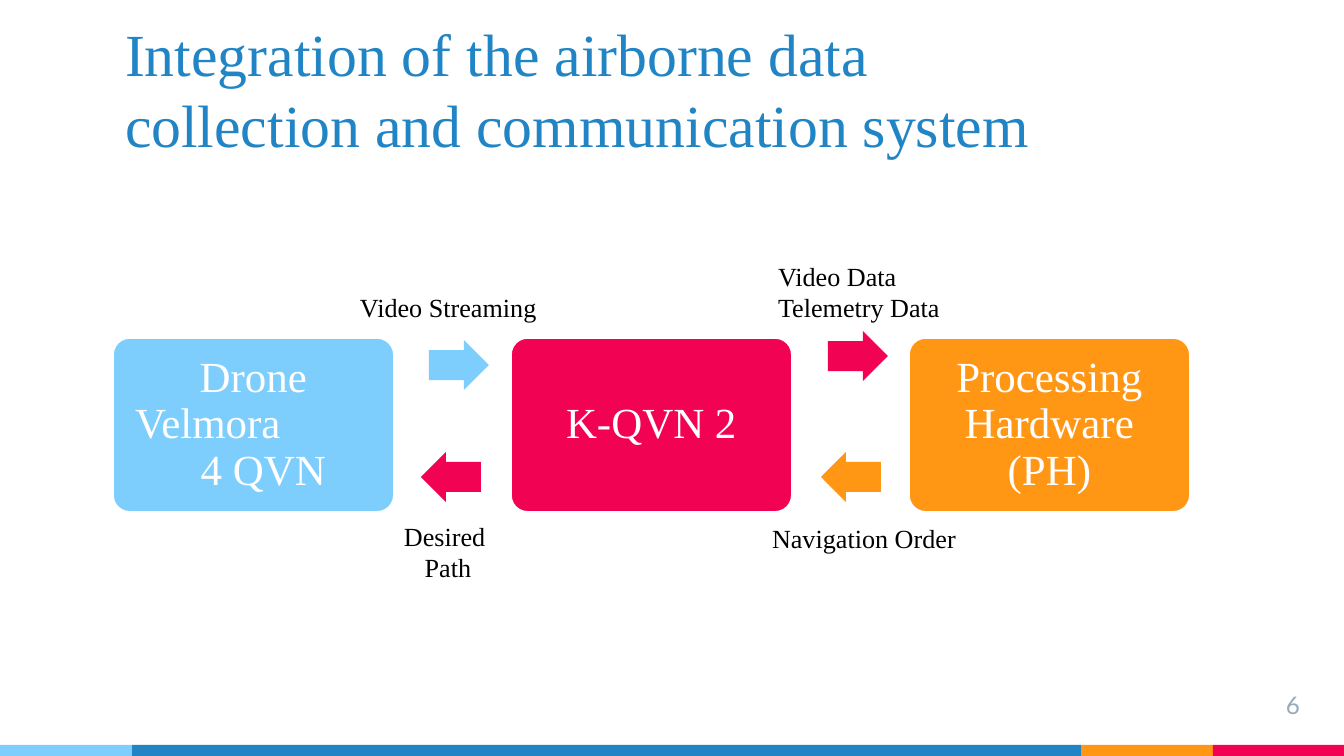
import dataclasses

import pptx
import pptx.dml.color
import pptx.enum.shapes
import pptx.enum.text
import pptx.util

SHAPE = pptx.enum.shapes.MSO_SHAPE
ALIGN = pptx.enum.text.PP_ALIGN
ANCHOR = pptx.enum.text.MSO_ANCHOR
PX_PER_INCH = 134.4
TITLE_ONLY_LAYOUT = 5


@dataclasses.dataclass(frozen=True)
class Theme:
    sky: str = "7ECEFD"
    blue: str = "2185C5"
    orange: str = "FF9715"
    red: str = "F20253"
    grey: str = "97ABBC"
    black: str = "000000"
    white: str = "FFFFFF"
    serif: str = "Times New Roman"
    sans: str = "Lato"
    title_size: int = 32
    box_size: int = 23
    label_size: int = 14
    number_size: int = 13


THEME = Theme()


def px(length):
    return pptx.util.Emu(round(length * 914400 / PX_PER_INCH))


def rgb(color):
    return pptx.dml.color.RGBColor.from_string(color)


def write_text(frame, lines, *, size, color, font=THEME.serif, align=ALIGN.LEFT,
               anchor=ANCHOR.TOP, inset=(13, 13), wrap=True, spacing=None):
    """Fill a text frame; inset is (horizontal, vertical) in px."""
    frame.auto_size = pptx.enum.text.MSO_AUTO_SIZE.NONE
    frame.word_wrap = wrap
    frame.vertical_anchor = anchor
    frame.margin_left = frame.margin_right = px(inset[0])
    frame.margin_top = frame.margin_bottom = px(inset[1])
    frame.text = "\n".join(lines)
    for paragraph in frame.paragraphs:
        paragraph.alignment = align
        if spacing:
            paragraph.line_spacing = spacing
        for run in paragraph.runs:
            run.font.name = font
            run.font.size = pptx.util.Pt(size)
            run.font.bold = False
            run.font.color.rgb = rgb(color)


def add_block(slide, preset, box, color, adjustments=()):
    block = slide.shapes.add_shape(preset, *map(px, box))
    block.shadow.inherit = False
    block.fill.solid()
    block.fill.fore_color.rgb = rgb(color)
    block.line.fill.background()
    for index, value in enumerate(adjustments):
        block.adjustments[index] = value
    return block


def add_title(slide, text):
    title = slide.shapes.title
    title.left, title.top, title.width, title.height = map(px, (112, 47, 977, 126))
    write_text(title.text_frame, [text], size=THEME.title_size,
               color=THEME.blue, anchor=ANCHOR.BOTTOM)


def add_footer_strip(slide):
    edges = (0, 132, 1081, 1213, 1344)
    colors = (THEME.sky, THEME.blue, THEME.orange, THEME.red)
    for left, right, color in zip(edges, edges[1:], colors):
        add_block(slide, SHAPE.RECTANGLE, (left, 745, right - left, 11), color)


def add_component(slide, left, lines, color):
    component = add_block(slide, SHAPE.ROUNDED_RECTANGLE, (left, 337, 283, 176),
                          color, (0.1,))
    component.line.color.rgb = rgb(THEME.white)
    component.line.width = pptx.util.Pt(2)
    write_text(component.text_frame, lines, size=THEME.box_size, color=THEME.white,
               align=ALIGN.CENTER, anchor=ANCHOR.MIDDLE, spacing=0.9)
    return component


def indent(paragraph, length, align):
    paragraph.alignment = align
    paragraph._p.get_or_add_pPr().set("marL", str(px(length)))


def add_text_box(slide, box, lines, **text_format):
    text_box = slide.shapes.add_textbox(*map(px, box))
    write_text(text_box.text_frame, lines, **text_format)


def main():
    deck = pptx.Presentation()
    deck.slide_width, deck.slide_height = px(1344), px(756)
    slide = deck.slides.add_slide(deck.slide_layouts[TITLE_ONLY_LAYOUT])

    add_footer_strip(slide)
    add_title(slide, "Integration of the airborne data collection "
                     "and communication system")

    components = [
        (["Drone", "Velmora", "4 QVN"], THEME.sky),
        (["K-QVN 2"], THEME.red),
        (["Processing Hardware (PH)"], THEME.orange),
    ]
    drone, _, _ = [add_component(slide, 112 + 398 * column, lines, color)
                   for column, (lines, color) in enumerate(components)]
    _, model, version = drone.text_frame.paragraphs
    indent(model, 5, ALIGN.LEFT)
    indent(version, 20, ALIGN.CENTER)

    flows = [
        (SHAPE.RIGHT_ARROW, 429, 340, THEME.sky),
        (SHAPE.RIGHT_ARROW, 828, 331, THEME.red),
        (SHAPE.LEFT_ARROW, 421, 452, THEME.red),
        (SHAPE.LEFT_ARROW, 821, 452, THEME.orange),
    ]
    for preset, left, top, color in flows:
        add_block(slide, preset, (left, top, 60, 50), color, (0.6, 0.5))

    labels = [
        ((347, 284, 207, 46), ["Video Streaming"], ALIGN.LEFT),
        ((765, 253, 192, 77), ["Video Data", "Telemetry Data"], ALIGN.LEFT),
        ((759, 515, 212, 46), ["Navigation Order"], ALIGN.LEFT),
        ((390, 513, 116, 77), ["Desired ", "Path"], ALIGN.CENTER),
    ]
    for box, lines, align in labels:
        add_text_box(slide, box, lines, size=THEME.label_size, color=THEME.black,
                     align=align, inset=(13, 7), wrap=False)

    add_text_box(slide, (1232, 677, 81, 46), ["6"], size=THEME.number_size,
                 color=THEME.grey, font=THEME.sans, align=ALIGN.RIGHT)
    deck.save("out.pptx")


if __name__ == "__main__":
    main()
